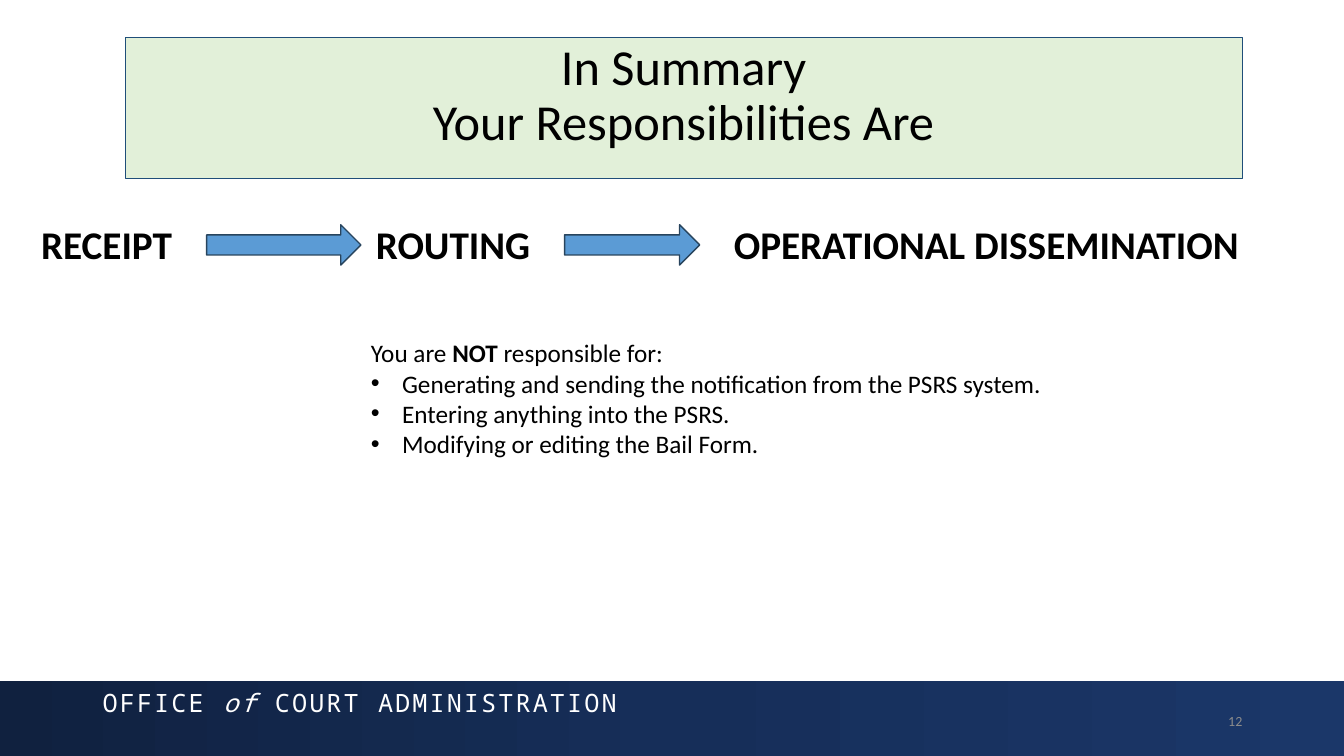
"""Build the summary slide of responsibilities."""
import copy
from dataclasses import dataclass

import pptx
import pptx.dml.color
import pptx.enum.shapes
import pptx.enum.text
import pptx.oxml
import pptx.oxml.ns
import pptx.util

Inches = pptx.util.Inches
Pt = pptx.util.Pt
SHAPES = pptx.enum.shapes.MSO_SHAPE
ALIGN = pptx.enum.text.PP_ALIGN
ANCHOR = pptx.enum.text.MSO_ANCHOR


@dataclass(frozen=True)
class Theme:
    """Fonts, type sizes and colours of the slide."""
    body_font: str = "Calibri"
    footer_font: str = "Noto Sans Mono"
    title_size: int = 36
    step_size: int = 28
    body_size: int = 18
    number_size: int = 10
    ink: str = "000000"
    white: str = "FFFFFF"
    grey: str = "8C8C8C"
    banner_fill: str = "E2F0D9"
    banner_line: str = "1F4E79"
    arrow_fill: str = "5B9BD5"
    arrow_line: str = "28445D"
    footer_stops: tuple = ((0, "10213F"), (0.5, "162E59"), (1, "1B3769"))


def rgb(value):
    """Turn a hex string into a colour."""
    return pptx.dml.color.RGBColor.from_string(value)


class SlideBuilder:
    """Draws styled elements on one slide."""

    def __init__(self, slide, theme):
        self.slide = slide
        self.theme = theme

    def shape(self, kind, box, fill=None, line=None, width=1):
        """Add a preset shape without shadow."""
        shape = self.slide.shapes.add_shape(kind, *map(Inches, box))
        shape.shadow.inherit = False
        if fill:
            shape.fill.solid()
            shape.fill.fore_color.rgb = rgb(fill)
        if line:
            shape.line.color.rgb = rgb(line)
            shape.line.width = Pt(width)
        else:
            shape.line.fill.background()
        return shape

    def gradient_band(self, box, stops):
        """Add a rectangle with a left-to-right gradient of three stops."""
        fill = self.shape(SHAPES.RECTANGLE, box).fill
        fill.gradient()
        fill.gradient_angle = 0
        first = fill.gradient_stops[0]._gs
        first.addnext(copy.deepcopy(first))
        for stop, (position, color) in zip(fill.gradient_stops, stops):
            stop.position = position
            stop.color.rgb = rgb(color)

    def text_box(self, box, anchor=ANCHOR.TOP):
        """Add a wrapping text box and return its text frame."""
        frame = self.slide.shapes.add_textbox(*map(Inches, box)).text_frame
        frame.word_wrap = True
        frame.vertical_anchor = anchor
        return frame

    def style(self, paragraph, size, color=None, font=None, bold=None, align=ALIGN.LEFT):
        """Set the alignment and font of a paragraph."""
        paragraph.alignment = align
        paragraph.font.name = font or self.theme.body_font
        paragraph.font.size = Pt(size)
        paragraph.font.bold = bold
        paragraph.font.color.rgb = rgb(color or self.theme.ink)

    def banner(self, box, lines):
        """Add the outlined title banner."""
        theme = self.theme
        frame = self.shape(SHAPES.RECTANGLE, box, theme.banner_fill, theme.banner_line, 0.75).text_frame
        frame.word_wrap = True
        frame.vertical_anchor = ANCHOR.TOP
        frame.text = "\n".join(lines)
        for paragraph in frame.paragraphs:
            paragraph.line_spacing = 0.9
            self.style(paragraph, theme.title_size, align=ALIGN.CENTER)

    def steps(self, box, names, stops):
        """Add the process steps on one line, spaced by tab stops."""
        paragraph = self.text_box(box).paragraphs[0]
        paragraph.add_run().text = "\t".join(names)
        tabs = pptx.oxml.parse_xml(f"<a:tabLst {pptx.oxml.ns.nsdecls('a')}/>")
        for stop in stops:
            tab = tabs.makeelement(pptx.oxml.ns.qn("a:tab"), {"pos": str(Inches(stop)), "algn": "l"})
            tabs.append(tab)
        paragraph._p.get_or_add_pPr().append(tabs)
        self.style(paragraph, self.theme.step_size, bold=True)

    def arrow(self, left, width):
        """Add a block arrow between two steps."""
        box = (left, 2.23, width, 0.4)
        self.shape(SHAPES.RIGHT_ARROW, box, self.theme.arrow_fill, self.theme.arrow_line)

    def bullet_list(self, box, lead, items):
        """Add a lead line with one bold word and the bullets below it."""
        frame = self.text_box(box)
        paragraph = frame.paragraphs[0]
        for text, bold in lead:
            run = paragraph.add_run()
            run.text = text
            run.font.bold = bold
        self.style(paragraph, self.theme.body_size)
        for item in items:
            paragraph = frame.add_paragraph()
            paragraph.text = item
            properties = paragraph._p.get_or_add_pPr()
            properties.set("marL", str(Inches(0.31)))
            properties.set("indent", str(-Inches(0.31)))
            for tag in ('buFont typeface="Arial"', 'buChar char="•"'):
                properties.append(pptx.oxml.parse_xml(f"<a:{tag} {pptx.oxml.ns.nsdecls('a')}/>"))
            self.style(paragraph, self.theme.body_size)

    def office_name(self, box, parts):
        """Add the letter-spaced office name."""
        paragraph = self.text_box(box).paragraphs[0]
        for text, italic in parts:
            run = paragraph.add_run()
            run.text = text
            run.font.italic = italic
            run._r.get_or_add_rPr().set("spc", "150")
        self.style(paragraph, self.theme.body_size, self.theme.white, self.theme.footer_font)

    def page_number(self, box, number):
        """Add the page number at the right."""
        paragraph = self.text_box(box, ANCHOR.MIDDLE).paragraphs[0]
        paragraph.text = number
        self.style(paragraph, self.theme.number_size, self.theme.grey, align=ALIGN.RIGHT)


def main():
    """Build and save the presentation."""
    presentation = pptx.Presentation()
    presentation.slide_width = Inches(13.33)
    presentation.slide_height = Inches(7.5)
    slide = presentation.slides.add_slide(presentation.slide_layouts[6])
    builder = SlideBuilder(slide, Theme())

    builder.gradient_band((0, 6.76, 13.33, 0.74), builder.theme.footer_stops)
    builder.office_name(
        (0.92, 6.77, 7.26, 0.4),
        (("OFFICE ", False), ("of", True), (" COURT ADMINISTRATION", False)),
    )
    builder.page_number((9.42, 6.95, 3, 0.4), "12")
    builder.banner((1.24, 0.37, 11.08, 1.4), ("In Summary", "Your Responsibilities Are"))
    builder.steps(
        (0.31, 2.14, 12.74, 0.57),
        ("RECEIPT", "ROUTING", "OPERATIONAL DISSEMINATION"),
        (3.32, 6.87),
    )
    for left, width in ((2.05, 1.53), (5.6, 1.34)):
        builder.arrow(left, width)
    builder.bullet_list(
        (3.58, 3.3, 7.02, 1.92),
        (("You are ", False), ("NOT", True), (" responsible for:", False)),
        (
            "Generating and sending the notification from the PSRS system.",
            "Entering anything into the PSRS.",
            "Modifying or editing the Bail Form.",
        ),
    )
    presentation.save("out.pptx")


if __name__ == "__main__":
    main()
